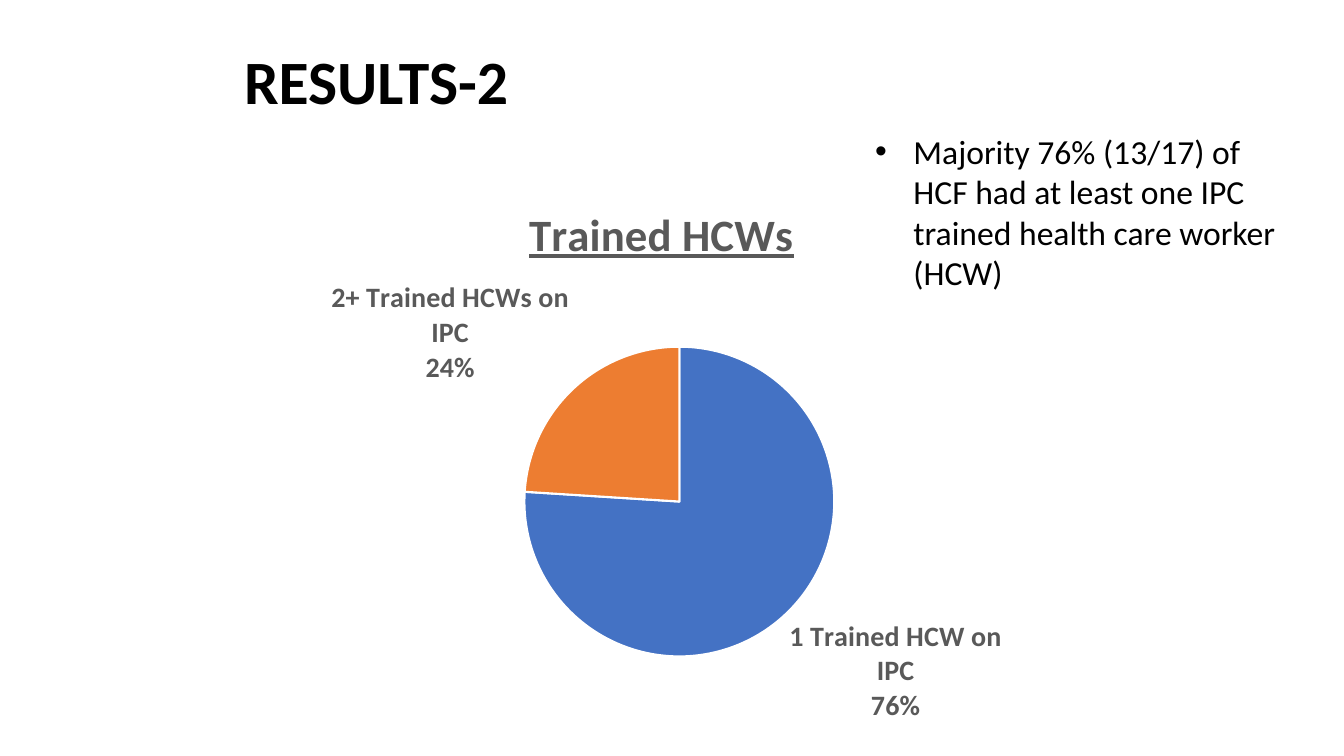
from lxml import etree
from pptx import Presentation
from pptx.chart.data import CategoryChartData
from pptx.dml.color import RGBColor
from pptx.enum.chart import XL_CHART_TYPE as ChartType, XL_LABEL_POSITION as LabelPosition
from pptx.enum.text import MSO_ANCHOR as Anchor, MSO_AUTO_SIZE as AutoSize, PP_ALIGN as Align
from pptx.oxml import parse_xml
from pptx.oxml.ns import nsdecls, qn
from pptx.util import Inches, Pt

BLACK = RGBColor(0x00, 0x00, 0x00)
WHITE = RGBColor(0xFF, 0xFF, 0xFF)
GREY = RGBColor(0x59, 0x59, 0x59)
BLUE = RGBColor(0x44, 0x72, 0xC4)
ORANGE = RGBColor(0xED, 0x7D, 0x31)


class ResultsPage:
    """Holds the font and the current slide, and adds each kind of element."""

    font_name = "Calibri"

    def __init__(self, deck):
        self.page = deck.slides.add_slide(deck.slide_layouts[1])

    def style(self, font, size, color, bold=False):
        font.name = self.font_name
        font.size = Pt(size)
        font.bold = bold
        font.color.rgb = color

    def place(self, box, left, top, width, height):
        box.left, box.top = Inches(left), Inches(top)
        box.width, box.height = Inches(width), Inches(height)

    def add_span(self, para, text, size, color, bold=False):
        span = para.add_run()
        span.text = text
        self.style(span.font, size, color, bold)
        return span

    def indent(self, para, margin, first=0):
        properties = para._p.get_or_add_pPr()
        properties.set("marL", str(Inches(margin)))
        properties.set("indent", str(Inches(first)))
        return properties

    def add_title(self, text):
        box = self.page.shapes.title
        self.place(box, 0.27, 0.4, 12.15, 0.87)
        frame = box.text_frame
        frame.auto_size = AutoSize.NONE
        frame.vertical_anchor = Anchor.MIDDLE
        para = frame.paragraphs[0]
        para.alignment = Align.LEFT
        para.line_spacing = 0.9
        self.indent(para, 2.05)
        self.add_span(para, text, 44, BLACK, bold=True)

    def add_list(self, items):
        box = self.page.placeholders[1]
        self.place(box, 8.58, 1.25, 4.24, 1.72)
        box.text_frame.auto_size = AutoSize.SHAPE_TO_FIT_TEXT
        for number, item in enumerate(items):
            para = box.text_frame.add_paragraph() if number else box.text_frame.paragraphs[0]
            para.space_before = Pt(0)
            properties = self.indent(para, 0.38, -0.38)
            etree.SubElement(properties, qn("a:buFont")).set("typeface", "Arial")
            etree.SubElement(properties, qn("a:buChar")).set("char", "•")
            self.add_span(para, item, 24, BLACK)
        self.page.shapes._spTree.append(box._element)

    def set_layout(self, parent, position, **fractions):
        for old in parent.findall(qn("c:layout")):
            parent.remove(old)
        layout = parse_xml(f"<c:layout {nsdecls('c')}><c:manualLayout/></c:layout>")
        settings = {"xMode": "edge", "yMode": "edge", **fractions}
        if "w" in fractions:
            settings = {"layoutTarget": "inner", **settings}
        for name, value in settings.items():
            etree.SubElement(layout[0], qn(f"c:{name}")).set("val", str(value))
        parent.insert(position, layout)

    def add_pie(self, title, slices):
        data = CategoryChartData()
        data.categories = [name for name, _, _ in slices]
        data.add_series("Series 1", [value for _, value, _ in slices])
        chart = self.page.shapes.add_chart(
            ChartType.PIE, Inches(0.27), Inches(1.7), Inches(12.56), Inches(5.8), data
        ).chart
        self.style(chart.font, 10, BLACK)
        chart.has_legend = False

        para = chart.chart_title.text_frame.paragraphs[0]
        self.add_span(para, title, 32, GREY, bold=True).font.underline = True
        self.set_layout(chart.chart_title._element, 1, x=0.39, y=0.04)

        plot = chart.plots[0]
        plot.vary_by_categories = True
        self.set_layout(plot._element.getparent(), 0, x=0.39, y=0.3, w=0.25, h=0.53)
        series = plot.series[0]
        for number, (_, _, color) in enumerate(slices):
            form = series.points[number].format
            form.fill.solid()
            form.fill.fore_color.rgb = color
            form.line.color.rgb = WHITE
            form.line.width = Pt(1.5)
        self.label_slices(series.data_labels)

    def label_slices(self, labels):
        labels.show_value = False
        labels.show_category_name = True
        labels.show_percentage = True
        labels.number_format = "0%"
        labels.number_format_is_linked = False
        labels.position = LabelPosition.OUTSIDE_END
        self.style(labels.font, 20, GREY, bold=True)
        separator = parse_xml(f"<c:separator {nsdecls('c')}>\n</c:separator>")
        labels._element.find(qn("c:showBubbleSize")).addnext(separator)


def main():
    deck = Presentation()
    deck.slide_width, deck.slide_height = Inches(13.33), Inches(7.5)
    results = ResultsPage(deck)
    results.add_title("RESULTS-2")
    results.add_pie("Trained HCWs", [
        ("1 Trained HCW on IPC", 76, BLUE),
        ("2+ Trained HCWs on IPC", 24, ORANGE),
    ])
    results.add_list([
        "Majority 76% (13/17) of HCF had at least one IPC trained health care worker (HCW)",
    ])
    deck.save("out.pptx")


if __name__ == "__main__":
    main()
